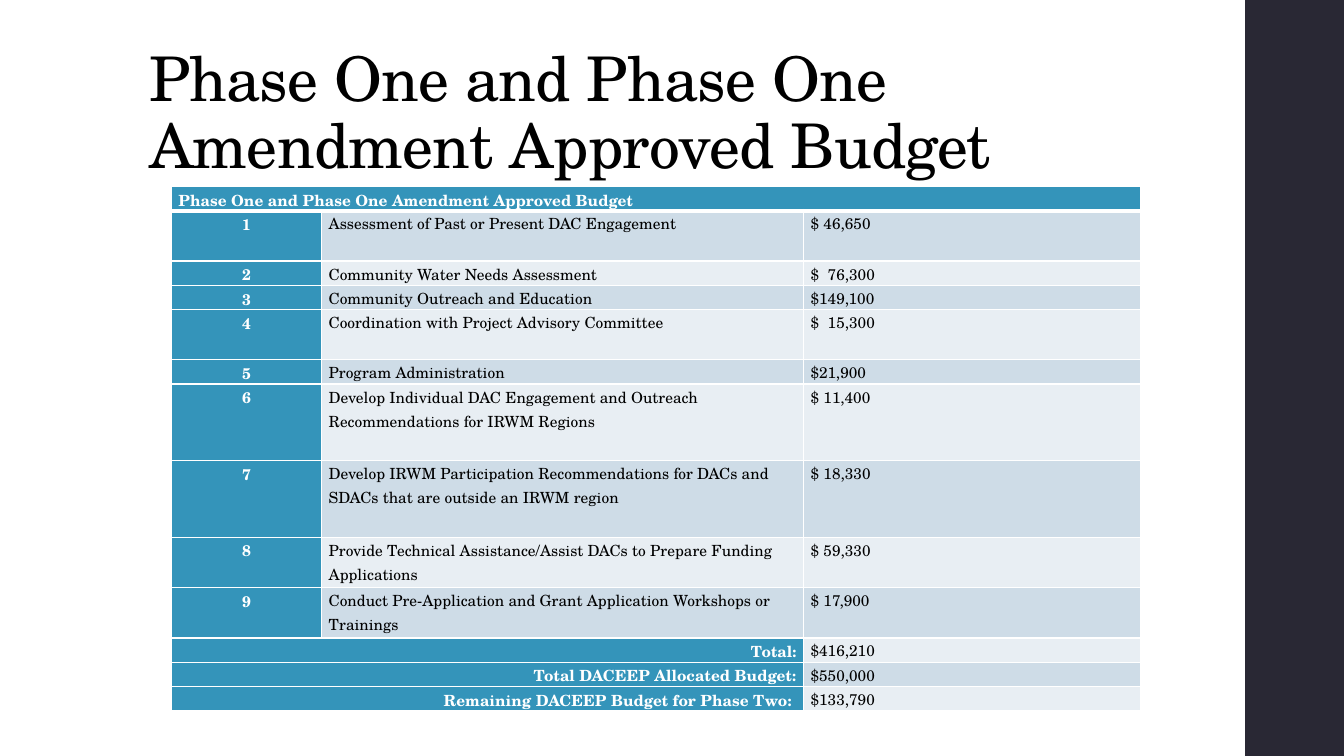
from lxml import etree
from pptx import Presentation, util as u
from pptx.dml.color import RGBColor
from pptx.enum import shapes, text
from pptx.oxml.ns import qn

TITLE = "Phase One and Phase One Amendment Approved Budget"
TASKS = [
    ("Assessment of Past or Present DAC Engagement", "$ 46,650", 0.5),
    ("Community Water Needs Assessment", "$  76,300", 0.24),
    ("Community Outreach and Education", "$149,100", 0.24),
    ("Coordination with Project Advisory Committee", "$  15,300", 0.5),
    ("Program Administration", "$21,900", 0.24),
    ("Develop Individual DAC Engagement and Outreach Recommendations for IRWM Regions",
     "$ 11,400", 0.76),
    ("Develop IRWM Participation Recommendations for DACs and SDACs that are outside "
     "an IRWM region", "$ 18,330", 0.76),
    ("Provide Technical Assistance/Assist DACs to Prepare Funding Applications",
     "$ 59,330", 0.5),
    ("Conduct Pre-Application and Grant Application Workshops or Trainings",
     "$ 17,900", 0.5),
]
TOTALS = [
    ("Total:", "$416,210"),
    ("Total DACEEP Allocated Budget:", "$550,000"),
    ("Remaining DACEEP Budget for Phase Two: ", "$133,790"),
]
COLUMNS = [1.49, 4.78, 3.34]
LINE_HEIGHT = 0.24
TEAL, BLACK, WHITE, DARK = "3494BA", "000000", "FFFFFF", "292834"
BANDS = ["CEDCE7", "E8EEF3"]
LEFT, CENTER, RIGHT, JUSTIFY = (
    text.PP_ALIGN.LEFT, text.PP_ALIGN.CENTER, text.PP_ALIGN.RIGHT, text.PP_ALIGN.JUSTIFY)


def rgb(color):
    return RGBColor.from_string(color)


def set_all(target, **values):
    for name, value in values.items():
        setattr(target, name, value)


class BudgetSlide:
    font = "TeX Gyre Schola"

    def __init__(self, prs):
        self.s = prs.slides.add_slide(prs.slide_layouts[6])

    def add_words(self, tf, words, size, color, bold=False, align=LEFT, spacing=1.0):
        p = tf.paragraphs[0]
        set_all(p, alignment=align, line_spacing=spacing)
        r = p.add_run()
        r.text = words
        set_all(r.font, name=self.font, size=u.Pt(size), bold=bold)
        r.font.color.rgb = rgb(color)
        return r

    def bar(self, x, y, w, h, color):
        sp = self.s.shapes.add_shape(shapes.MSO_SHAPE.RECTANGLE, *map(u.Inches, (x, y, w, h)))
        sp.shadow.inherit = False
        sp.fill.solid()
        sp.fill.fore_color.rgb = rgb(color)
        sp.line.fill.background()

    def title(self, x, y, w, h, words):
        tf = self.s.shapes.add_textbox(*map(u.Inches, (x, y, w, h))).text_frame
        set_all(tf, word_wrap=True, vertical_anchor=text.MSO_ANCHOR.BOTTOM)
        r = self.add_words(tf, words, 44, BLACK, spacing=0.9)
        r.font._element.set("spc", "-50")

    def table(self, x, y, columns, heights):
        frame = self.s.shapes.add_table(
            len(heights), len(columns),
            *map(u.Inches, (x, y, sum(columns), sum(heights))))
        table = frame.table
        for column, width in zip(table.columns, columns):
            column.width = u.Inches(width)
        for row, height in zip(table.rows, heights):
            row.height = u.Inches(height)
        return table

    def paint(self, cell, fill, top=1, bottom=1):
        """Set the margins, fill and white borders of a cell."""
        set_all(cell, margin_left=u.Inches(0.07), margin_right=u.Inches(0.07),
                margin_top=0, margin_bottom=0)
        cell.fill.solid()
        cell.fill.fore_color.rgb = rgb(fill)
        tc_pr = cell._tc.get_or_add_tcPr()
        for i, (side, width) in enumerate(zip("LRTB", (1, 1, top, bottom))):
            ln = etree.Element(qn(f"a:ln{side}"), w=str(u.Pt(width)))
            solid = etree.SubElement(ln, qn("a:solidFill"))
            etree.SubElement(solid, qn("a:srgbClr"), val=WHITE)
            tc_pr.insert(i, ln)

    def entry(self, cell, words, heading=False, align=LEFT):
        self.add_words(cell.text_frame, words, 11, WHITE if heading else BLACK,
                       heading, align, 1.07)


def fill_budget(slide, table):
    last = len(TASKS) + len(TOTALS)
    for i in range(last + 1):
        for j in range(len(COLUMNS)):
            heading = i == 0 or j == 0 or (i > len(TASKS) and j == 1)
            slide.paint(table.cell(i, j), TEAL if heading else BANDS[(i - 1) % 2],
                        top=3 if i == 1 else 1, bottom=3 if i == 0 else 1)

    table.cell(0, 0).merge(table.cell(0, 2))
    slide.entry(table.cell(0, 0), TITLE, True)
    for i, (task, amount, _) in enumerate(TASKS, 1):
        slide.entry(table.cell(i, 0), str(i), True, CENTER)
        slide.entry(table.cell(i, 1), task)
        slide.entry(table.cell(i, 2), amount, align=JUSTIFY)
    for i, (label, amount) in enumerate(TOTALS, len(TASKS) + 1):
        table.cell(i, 0).merge(table.cell(i, 1))
        slide.entry(table.cell(i, 0), label, True, RIGHT)
        slide.entry(table.cell(i, 2), amount, align=JUSTIFY)


def main():
    prs = Presentation()
    set_all(prs, slide_width=u.Inches(13.33), slide_height=u.Inches(7.5))
    slide = BudgetSlide(prs)
    slide.bar(12.35, 0, 0.98, 7.5, DARK)
    slide.title(1.38, 0.4, 10.6, 1.45, TITLE)
    heights = [LINE_HEIGHT] + [h for _, _, h in TASKS] + [LINE_HEIGHT] * len(TOTALS)
    fill_budget(slide, slide.table(1.7, 1.85, COLUMNS, heights))
    prs.save("out.pptx")


if __name__ == "__main__":
    main()
